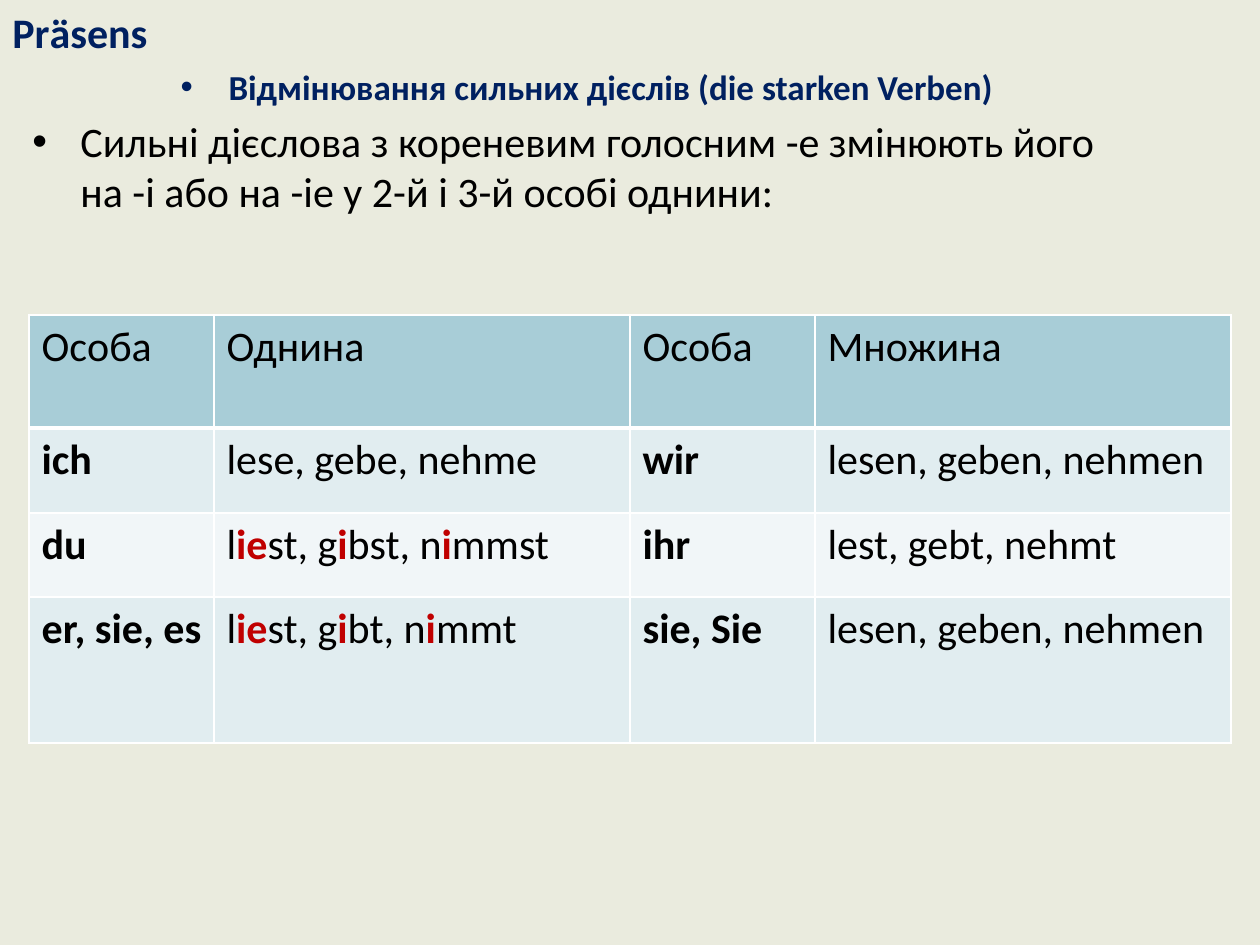
from lxml import etree
from pptx import Presentation
from pptx import util as u
from pptx.dml.color import RGBColor
from pptx.enum import text
from pptx.oxml.ns import qn

PX = 914400 // 126  # slide scale: 126 px to the inch
NAVY, BLACK, RED, WHITE = "002060", "000000", "C00000", "FFFFFF"
BACKGROUND, HEADER, BAND_DARK, BAND_LIGHT = "EAEBDE", "A8CDD7", "E1EDF0", "F1F6F8"

# Asterisks enclose the changed root vowel
ROWS = [
    ("Особа", "Однина", "Особа", "Множина"),
    ("ich", "lese, gebe, nehme", "wir", "lesen, geben, nehmen"),
    ("du", "l*ie*st, g*i*bst, n*i*mmst", "ihr", "lest, gebt, nehmt"),
    ("er, sie, es", "l*ie*st, g*i*bt, n*i*mmt", "sie, Sie", "lesen, geben, nehmen"),
]
COLUMN_WIDTHS = [185, 416, 185, 416]
ROW_HEIGHTS = [113, 85, 84, 146]
ROW_FILLS = [HEADER, BAND_DARK, BAND_LIGHT, BAND_DARK]


def px(value):
    return u.Emu(value * PX)


def color(value):
    return RGBColor.from_string(value)


def add_run(paragraph, words, size=24, fill=BLACK, bold=False):
    run = paragraph.add_run()
    run.text = words
    values = {"name": "Calibri", "size": u.Pt(size), "bold": bold}
    for name, value in values.items():
        setattr(run.font, name, value)
    run.font.color.rgb = color(fill)


def add_text_box(slide, left, top, width, height, wrap=True):
    frame = slide.shapes.add_textbox(px(left), px(top), px(width), px(height)).text_frame
    frame.word_wrap = wrap
    return frame


def set_bullet(paragraph, indent=48):
    properties = paragraph._p.get_or_add_pPr()
    properties.set("marL", str(px(indent)))
    properties.set("indent", str(-px(indent)))
    etree.SubElement(properties, qn("a:buFont"), typeface="Arial")
    etree.SubElement(properties, qn("a:buChar"), char="•")


def set_borders(cell, widths):
    properties = cell._tc.get_or_add_tcPr()
    for position, (side, width) in enumerate(widths.items()):
        line = etree.Element(qn(f"a:ln{side}"), w=str(u.Pt(width)))
        fill = etree.SubElement(line, qn("a:solidFill"))
        etree.SubElement(fill, qn("a:srgbClr"), val=WHITE)
        properties.insert(position, line)


def add_verb_table(slide, left, top):
    table = slide.shapes.add_table(
        len(ROWS), len(COLUMN_WIDTHS), px(left), px(top),
        px(sum(COLUMN_WIDTHS)), px(sum(ROW_HEIGHTS))).table
    for column, width in zip(table.columns, COLUMN_WIDTHS):
        column.width = px(width)
    for row_index, row in enumerate(ROWS):
        table.rows[row_index].height = px(ROW_HEIGHTS[row_index])
        for column_index, words in enumerate(row):
            cell = table.cell(row_index, column_index)
            cell.fill.solid()
            cell.fill.fore_color.rgb = color(ROW_FILLS[row_index])
            set_borders(cell, {"L": 1, "R": 1,
                               "T": 3 if row_index == 1 else 1,
                               "B": 3 if row_index == 0 else 1})
            is_pronoun = row_index > 0 and column_index % 2 == 0
            for part_index, part in enumerate(words.split("*")):
                is_vowel = part_index % 2 == 1
                add_run(cell.text_frame.paragraphs[0], part,
                        fill=RED if is_vowel else BLACK, bold=is_pronoun or is_vowel)


def main():
    presentation = Presentation()
    presentation.slide_width, presentation.slide_height = px(1260), px(945)
    slide = presentation.slides.add_slide(presentation.slide_layouts[6])
    slide.background.fill.solid()
    slide.background.fill.fore_color.rgb = color(BACKGROUND)

    # Subtitle and rule
    body = add_text_box(slide, 20, 59, 1134, 624)
    subtitle = body.paragraphs[0]
    subtitle.alignment = text.PP_ALIGN.CENTER
    set_bullet(subtitle)
    add_run(subtitle, "Відмінювання сильних дієслів (die starken Verben)", 20, NAVY, True)
    rule = body.add_paragraph()
    rule.space_before = u.Pt(4.8)
    set_bullet(rule)
    add_run(rule, "Сильні дієслова з кореневим голосним -е змінюють його "
                  "на -і або на -іе у 2-й і 3-й особі однини:")

    # Tense name
    title = add_text_box(slide, 0, 0, 178, 63, wrap=False)
    add_run(title.paragraphs[0], "Prӓsens", fill=NAVY, bold=True)

    # Conjugation table
    add_verb_table(slide, 29, 315)
    presentation.save("out.pptx")


if __name__ == "__main__":
    main()
